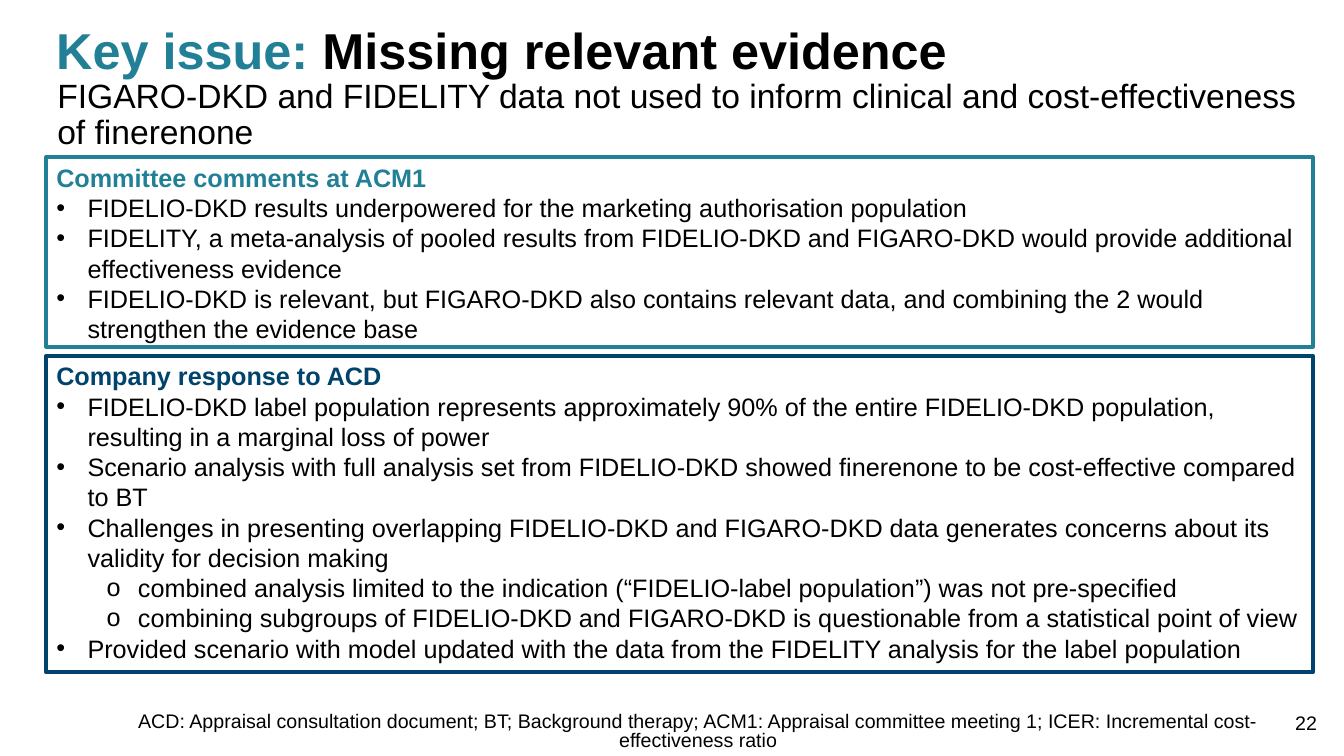
from dataclasses import dataclass

from lxml import etree
from pptx import Presentation, util as u
from pptx.dml.color import RGBColor
from pptx.enum import shapes, text
from pptx.oxml.ns import qn


@dataclass(frozen=True)
class Theme:
    font: str = "Arial"
    black: str = "000000"
    teal: str = "228096"
    navy: str = "00436C"
    title: int = 36
    lead: int = 24
    body: int = 18
    note: int = 14
    border: int = 3


@dataclass(frozen=True)
class Area:
    """Left, top, width and height as percentages of the slide."""
    left: float
    top: float
    width: float
    height: float


@dataclass(frozen=True)
class Label:
    area: Area
    words: str
    size: int
    align: text.PP_ALIGN = text.PP_ALIGN.LEFT
    anchor: text.MSO_ANCHOR = text.MSO_ANCHOR.TOP
    spacing: float = 1.0


@dataclass(frozen=True)
class Point:
    words: str
    level: int = 0


@dataclass(frozen=True)
class Panel:
    top: float
    height: float
    color: str
    head: str
    points: tuple[Point, ...]


THEME = Theme()
WIDTH, HEIGHT = u.Inches(13.33), u.Inches(7.5)
LEFT, SPAN = 3.45, 94.22
HANG, STEP = u.Inches(0.31), u.Inches(0.5)
MARKS = ("•", "o")

TITLE = Label(Area(LEFT, 2.8, 93.32, 7.73), "Key issue: ", THEME.title, spacing=0.9)
TOPIC = "Missing relevant evidence"
LABELS = (
    Label(Area(3.53, 9.87, 95.05, 15.73),
          "FIGARO-DKD and FIDELITY data not used to inform clinical and "
          "cost-effectiveness of finerenone", THEME.lead, spacing=0.9),
    Label(Area(8.85, 93.07, 86.2, 6.93),
          "ACD: Appraisal consultation document; BT; Background therapy; "
          "ACM1: Appraisal committee meeting 1; ICER: Incremental "
          "cost-effectiveness ratio", THEME.note, text.PP_ALIGN.CENTER,
          text.MSO_ANCHOR.BOTTOM, 0.8),
    Label(Area(94.9, 93.33, 3.83, 5.33), "22", THEME.note, text.PP_ALIGN.RIGHT),
)
PANELS = (
    Panel(47.07, 41.87, THEME.navy, "Company response to ACD", (
        Point("FIDELIO-DKD label population represents approximately 90% of the "
              "entire FIDELIO-DKD population, resulting in a marginal loss of power"),
        Point("Scenario analysis with full analysis set from FIDELIO-DKD showed "
              "finerenone to be cost-effective compared to BT"),
        Point("Challenges in presenting overlapping FIDELIO-DKD and FIGARO-DKD data "
              "generates concerns about its validity for decision making"),
        Point("combined analysis limited to the indication (“FIDELIO-label "
              "population”) was not pre-specified", 1),
        Point("combining subgroups of FIDELIO-DKD and FIGARO-DKD is questionable "
              "from a statistical point of view", 1),
        Point("Provided scenario with model updated with the data from the "
              "FIDELITY analysis for the label population"),
    )),
    Panel(20.8, 25.07, THEME.teal, "Committee comments at ACM1", (
        Point("FIDELIO-DKD results underpowered for the marketing authorisation "
              "population"),
        Point("FIDELITY, a meta-analysis of pooled results from FIDELIO-DKD and "
              "FIGARO-DKD would provide additional effectiveness evidence"),
        Point("FIDELIO-DKD is relevant, but FIGARO-DKD also contains relevant data, "
              "and combining the 2 would strengthen the evidence base"),
    )),
)


def place(area: Area) -> tuple[int, int, int, int]:
    return (int(WIDTH * area.left / 100), int(HEIGHT * area.top / 100),
            int(WIDTH * area.width / 100), int(HEIGHT * area.height / 100))


def style(run, size: int, color: str = THEME.black, bold: bool = False) -> None:
    run.font.name = THEME.font
    run.font.size = u.Pt(size)
    run.font.bold = bold
    run.font.color.rgb = RGBColor.from_string(color)


def add_mark(para, level: int) -> None:
    """Give a paragraph its bullet and hanging indent."""
    para.level = level
    props = para._p.get_or_add_pPr()
    props.set("marL", str(HANG + level * STEP))
    props.set("indent", str(-HANG))
    etree.SubElement(props, qn("a:buFont")).set("typeface", THEME.font)
    etree.SubElement(props, qn("a:buChar")).set("char", MARKS[level])


def add_label(slide, label: Label):
    """Draw a one-paragraph text box and return its paragraph."""
    frame = slide.shapes.add_textbox(*place(label.area)).text_frame
    frame.word_wrap = True
    frame.vertical_anchor = label.anchor
    frame.text = label.words
    para = frame.paragraphs[0]
    para.alignment = label.align
    para.line_spacing = label.spacing
    style(para.runs[0], label.size)
    return para


def add_title(slide) -> None:
    para = add_label(slide, TITLE)
    style(para.runs[0], TITLE.size, THEME.teal, True)
    topic = para.add_run()
    topic.text = TOPIC
    style(topic, TITLE.size, bold=True)


def add_panel(slide, panel: Panel) -> None:
    area = Area(LEFT, panel.top, SPAN, panel.height)
    box = slide.shapes.add_shape(shapes.MSO_SHAPE.RECTANGLE, *place(area))
    box.shadow.inherit = False
    box.fill.background()
    box.line.color.rgb = RGBColor.from_string(panel.color)
    box.line.width = u.Pt(THEME.border)
    frame = box.text_frame
    frame.word_wrap = True
    frame.vertical_anchor = text.MSO_ANCHOR.TOP
    frame.text = panel.head
    head = frame.paragraphs[0]
    head.alignment = text.PP_ALIGN.LEFT
    style(head.runs[0], THEME.body, panel.color, True)
    for point in panel.points:
        para = frame.add_paragraph()
        para.text = point.words
        para.alignment = text.PP_ALIGN.LEFT
        add_mark(para, point.level)
        style(para.runs[0], THEME.body)


def main() -> None:
    deck = Presentation()
    deck.slide_width, deck.slide_height = WIDTH, HEIGHT
    slide = deck.slides.add_slide(deck.slide_layouts[6])
    add_title(slide)
    for panel in PANELS:
        add_panel(slide, panel)
    for label in LABELS:
        add_label(slide, label)
    deck.save("out.pptx")


if __name__ == "__main__":
    main()
